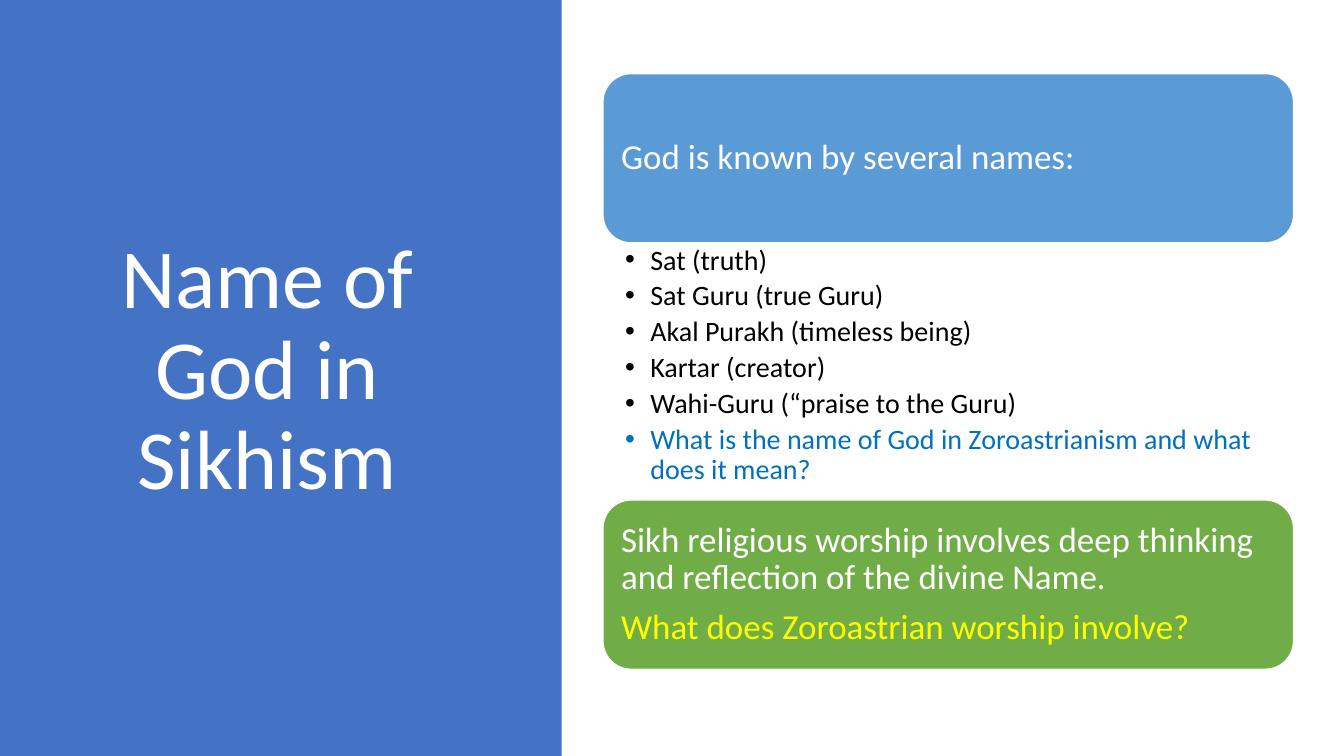
from dataclasses import dataclass

from pptx import Presentation
from pptx.dml.color import RGBColor
from pptx.enum.shapes import MSO_SHAPE
from pptx.enum.text import MSO_ANCHOR, MSO_AUTO_SIZE, PP_ALIGN
from pptx.util import Inches, Pt


@dataclass(frozen=True)
class Theme:
    font: str = "Calibri"
    panel: str = "4472C4"
    names_card: str = "5B9BD5"
    worship_card: str = "70AD47"
    light: str = "FFFFFF"
    dark: str = "000000"
    list_question: str = "0070C0"
    card_question: str = "FFFF00"
    title_size: float = 60
    card_size: float = 25
    list_size: float = 20


def set_values(target, values):
    for name, value in values.items():
        setattr(target, name, value)


class SlideBuilder:
    """Holds the theme and the current slide."""

    def __init__(self, slide, theme):
        self.slide = slide
        self.theme = theme

    def place(self, shape, box):
        set_values(shape, dict(zip(("left", "top", "width", "height"), map(Inches, box))))

    def fill_text(self, shape, lines, size, frame_format, paragraph_format):
        """Fill a shape with (text, colour) lines, one paragraph each."""
        frame = shape.text_frame
        set_values(frame, {"word_wrap": True, "auto_size": MSO_AUTO_SIZE.NONE, **frame_format})
        for index, (text, colour) in enumerate(lines):
            paragraph = frame.add_paragraph() if index else frame.paragraphs[0]
            paragraph.text = text
            set_values(paragraph, {"line_spacing": 0.9, "space_before": Pt(0), **paragraph_format})
            font = paragraph.runs[0].font
            set_values(font, {"name": self.theme.font, "size": Pt(size)})
            font.color.rgb = RGBColor.from_string(colour)

    def filled_shape(self, kind, box, fill):
        shape = self.slide.shapes.add_shape(kind, *map(Inches, box))
        shape.shadow.inherit = False
        shape.fill.solid()
        shape.fill.fore_color.rgb = RGBColor.from_string(fill)
        shape.line.fill.background()
        return shape

    def panel(self, box):
        """Draw the side panel behind the title."""
        panel = self.filled_shape(MSO_SHAPE.RECTANGLE, box, self.theme.panel)
        self.slide.shapes.title.element.addprevious(panel.element)

    def title(self, text, box):
        title = self.slide.shapes.title
        self.place(title, box)
        self.fill_text(title, [(text, self.theme.light)], self.theme.title_size,
                       {"vertical_anchor": MSO_ANCHOR.MIDDLE}, {"alignment": PP_ALIGN.CENTER})

    def card(self, lines, box, fill):
        card = self.filled_shape(MSO_SHAPE.ROUNDED_RECTANGLE, box, fill)
        card.line.color.rgb = RGBColor.from_string(self.theme.light)
        card.line.width = Pt(1)
        margins = dict.fromkeys(
            ("margin_left", "margin_top", "margin_right", "margin_bottom"), Inches(0.1))
        self.fill_text(card, lines, self.theme.card_size,
                       {"vertical_anchor": MSO_ANCHOR.MIDDLE, **margins},
                       {"alignment": PP_ALIGN.LEFT, "space_after": Pt(8.75)})

    def bullet_list(self, lines, box):
        body = self.slide.placeholders[1]
        self.place(body, box)
        self.fill_text(body, lines, self.theme.list_size,
                       {"vertical_anchor": MSO_ANCHOR.TOP,
                        "margin_left": Inches(0.22), "margin_right": Inches(0.19),
                        "margin_top": Inches(0.03), "margin_bottom": Inches(0.03)},
                       {"alignment": PP_ALIGN.LEFT, "space_after": Pt(4)})
        for paragraph in body.text_frame.paragraphs:
            properties = paragraph._p.get_or_add_pPr()
            properties.set("marL", str(Inches(0.25)))
            properties.set("indent", str(-Inches(0.25)))


def main():
    presentation = Presentation()
    set_values(presentation, {"slide_width": Inches(13.33), "slide_height": Inches(7.5)})
    theme = Theme()
    builder = SlideBuilder(presentation.slides.add_slide(presentation.slide_layouts[1]), theme)

    left, width, card_height = 5.98, 6.85, 1.68
    names_top, list_height = 0.73, 2.55
    list_top = names_top + card_height
    worship_top = list_top + list_height

    builder.panel((0, 0, 5.57, 7.5))
    builder.title("Name of God in Sikhism", (0.57, 0.68, 4.16, 6.02))
    builder.card([("God is known by several names:", theme.light)],
                 (left, names_top, width, card_height), theme.names_card)
    names = ["Sat (truth)", "Sat Guru (true Guru)", "Akal Purakh (timeless being)",
             "Kartar (creator)", "Wahi-Guru (“praise to the Guru)"]
    question = "What is the name of God in Zoroastrianism and what does it mean?"
    builder.bullet_list([(name, theme.dark) for name in names] + [(question, theme.list_question)],
                        (left, list_top, width, list_height))
    builder.card([("Sikh religious worship involves deep thinking and reflection of the divine Name.",
                   theme.light),
                  ("What does Zoroastrian worship involve?", theme.card_question)],
                 (left, worship_top, width, card_height), theme.worship_card)

    presentation.save("out.pptx")


if __name__ == "__main__":
    main()
